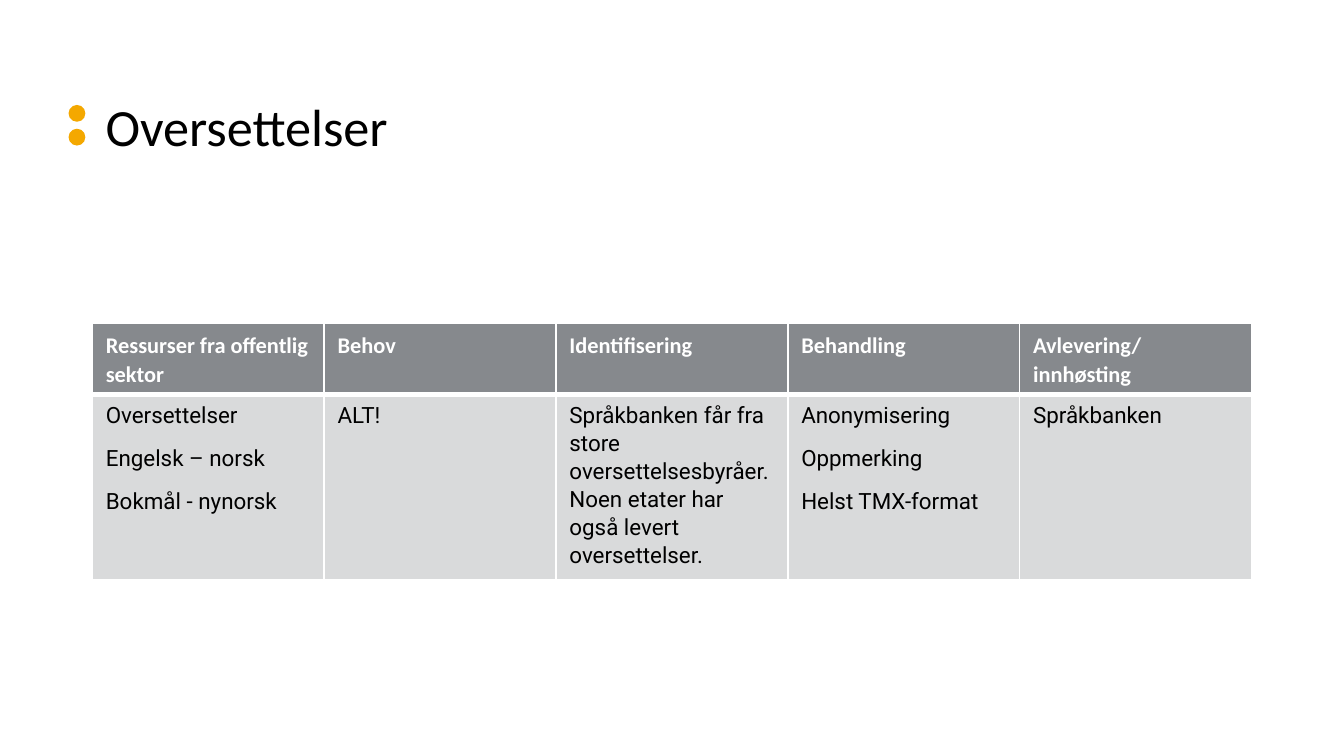
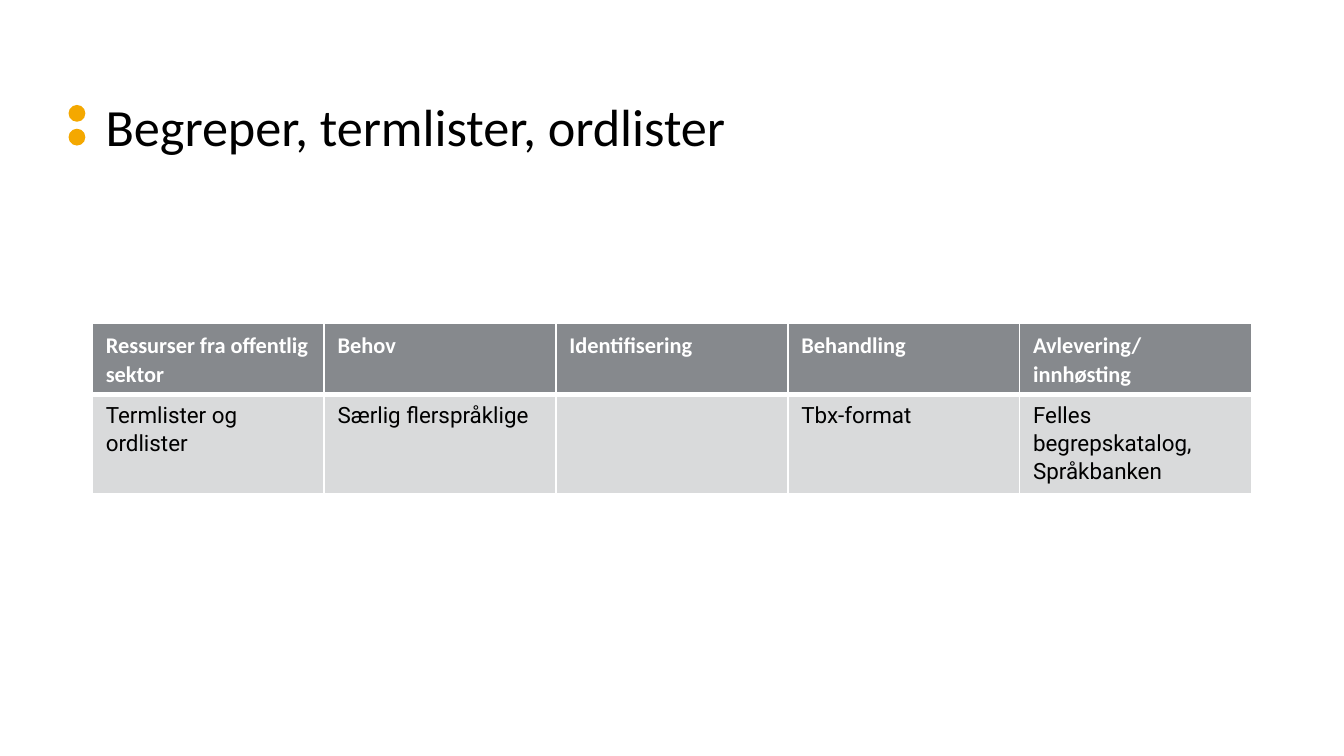
from dataclasses import dataclass

from pptx import Presentation
from pptx.dml.color import RGBColor
from pptx.enum.shapes import MSO_SHAPE as Shape
from pptx.enum.text import MSO_ANCHOR as Anchor
from pptx.oxml.ns import qn
from pptx.util import Pt
from lxml.etree import SubElement

# Scale and palette
PX = 9525
BLACK = RGBColor(0x00, 0x00, 0x00)
WHITE = RGBColor(0xFF, 0xFF, 0xFF)
AMBER = RGBColor(0xF4, 0xA8, 0x00)
GRAY = RGBColor(0x86, 0x89, 0x8D)
LIGHT_GRAY = RGBColor(0xD9, 0xDA, 0xDB)

# Shared layout, in px
LEFT, WIDTH = 66, 828
TITLE_TOP, TITLE_HEIGHT = 68, 91
DOT_LEFT, DOT_SIZE, DOT_TOPS = 49, 12, (75, 92)
TABLE_TOP, ROW_HEIGHT = 231, 39


@dataclass(frozen=True)
class TextStyle:
    font: str
    size: int
    color: RGBColor
    bold: bool = False
    line_spacing: float = 1.07
    space_after: int = 8


@dataclass(frozen=True)
class RowStyle:
    text: TextStyle
    fill: RGBColor
    top_border: int
    bottom_border: int


@dataclass(frozen=True)
class Resource:
    title: str
    details: tuple[tuple[str, ...], ...]


TITLE = TextStyle("Calibri", 28, BLACK, line_spacing=0.9, space_after=0)
HEADER = RowStyle(TextStyle("Calibri", 12, WHITE, bold=True), GRAY, 1, 3)
BODY = RowStyle(TextStyle("Roboto", 12, BLACK), LIGHT_GRAY, 3, 1)

STEPS = (
    ("Ressurser fra offentlig sektor",),
    ("Behov",),
    ("Identifisering",),
    ("Behandling",),
    ("Avlevering/innhøsting",),
)

RESOURCES = (
    Resource("Oversettelser", (
        ("Oversettelser", "Engelsk – norsk", "Bokmål - nynorsk"),
        ("ALT!",),
        ("Språkbanken får fra store oversettelsesbyråer. "
         "Noen etater har også levert oversettelser.",),
        ("Anonymisering", "Oppmerking", "Helst TMX-format"),
        ("Språkbanken",),
    )),
    Resource("Begreper, termlister, ordlister", (
        ("Termlister og ordlister",),
        ("Særlig flerspråklige",),
        (),
        ("Tbx-format",),
        ("Felles begrepskatalog, Språkbanken",),
    )),
)


def write(frame, lines: tuple[str, ...], style: TextStyle) -> None:
    for index, line in enumerate(lines):
        paragraph = frame.add_paragraph() if index else frame.paragraphs[0]
        paragraph.line_spacing = style.line_spacing
        paragraph.space_after = Pt(style.space_after)
        run = paragraph.add_run()
        run.text = line
        run.font.name = style.font
        run.font.size = Pt(style.size)
        run.font.bold = style.bold
        run.font.color.rgb = style.color


def add_heading(slide, title: str) -> None:
    for top in DOT_TOPS:
        dot = slide.shapes.add_shape(
            Shape.OVAL, DOT_LEFT * PX, top * PX, DOT_SIZE * PX, DOT_SIZE * PX)
        dot.shadow.inherit = False
        dot.fill.solid()
        dot.fill.fore_color.rgb = AMBER
        dot.line.fill.background()
    heading = slide.shapes.add_textbox(
        LEFT * PX, TITLE_TOP * PX, WIDTH * PX, TITLE_HEIGHT * PX).text_frame
    heading.word_wrap = True
    heading.vertical_anchor = Anchor.TOP
    write(heading, (title,), TITLE)


def add_borders(cell, top: int, bottom: int) -> None:
    properties = cell._tc.get_or_add_tcPr()
    for side, points in (("L", 1), ("R", 1), ("T", top), ("B", bottom)):
        edge = SubElement(properties, qn(f"a:ln{side}"), w=str(int(Pt(points))))
        SubElement(SubElement(edge, qn("a:solidFill")), qn("a:srgbClr"), val=str(WHITE))


def add_resource_table(slide, resource: Resource) -> None:
    rows = ((STEPS, HEADER), (resource.details, BODY))
    table = slide.shapes.add_table(
        len(rows), len(STEPS), LEFT * PX, TABLE_TOP * PX,
        WIDTH * PX, len(rows) * ROW_HEIGHT * PX).table
    table.horz_banding = False
    for row, (contents, style) in zip(table.rows, rows):
        for cell, lines in zip(row.cells, contents):
            add_borders(cell, style.top_border, style.bottom_border)
            cell.fill.solid()
            cell.fill.fore_color.rgb = style.fill
            write(cell.text_frame, lines, style.text)


def main() -> None:
    deck = Presentation()
    deck.slide_width, deck.slide_height = 960 * PX, 540 * PX
    blank = deck.slide_layouts[6]
    for resource in RESOURCES:
        slide = deck.slides.add_slide(blank)
        add_heading(slide, resource.title)
        add_resource_table(slide, resource)
    deck.save("out.pptx")


if __name__ == "__main__":
    main()
